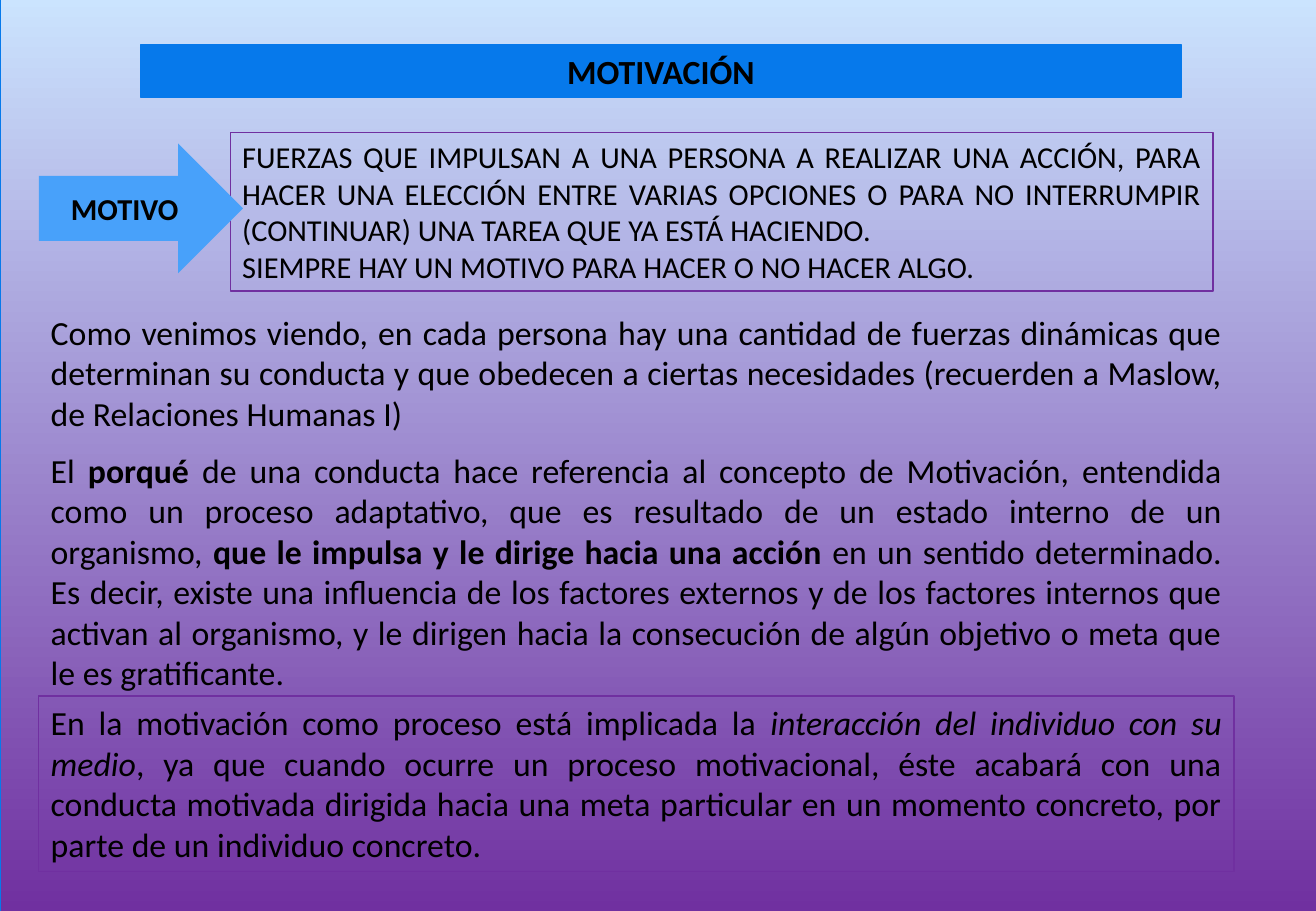
from pptx import Presentation
from pptx.dml.color import RGBColor
from pptx.enum import shapes, text
from pptx.util import Pt

FONT = "Calibri"
BLACK, BLUE, SKY, PURPLE, PALE = "000000", "0679EB", "48A1FA", "7030A0", "CBE4FE"
WIDTH, HEIGHT = 780, 540
LEFT, BODY_WIDTH = 23, 708.5

TITLE = [[("MOTIVACIÓN", "b")]]
MOTIVE = [[("MOTIVO", "b")]]
DEFINITION = [
    [("FUERZAS QUE IMPULSAN A UNA PERSONA A REALIZAR UNA ACCIÓN, PARA HACER UNA "
      "ELECCIÓN ENTRE VARIAS OPCIONES O PARA NO INTERRUMPIR (CONTINUAR) UNA TAREA "
      "QUE YA ESTÁ HACIENDO.", "")],
    [("SIEMPRE HAY UN MOTIVO PARA HACER O NO HACER ALGO.", "")],
]
EXPLANATION = [
    [("Como venimos viendo, en cada persona hay una cantidad de fuerzas dinámicas que "
      "determinan su conducta y que obedecen a ciertas necesidades (recuerden a Maslow, "
      "de Relaciones Humanas I)", "")],
    [("El ", ""), ("porqué", "b"),
     (" de una conducta hace referencia al concepto de Motivación, entendida como un "
      "proceso adaptativo, que es resultado de un estado interno de un organismo, ", ""),
     ("que le impulsa y le dirige hacia una acción", "b"),
     (" en un sentido determinado. Es decir, existe una influencia de los factores "
      "externos y de los factores internos que activan al organismo, y le dirigen hacia "
      "la consecución de algún objetivo o meta que le es gratificante.", "")],
]
CONCLUSION = [
    [("En la motivación como proceso está implicada la ", ""),
     ("interacción del individuo con su medio", "i"),
     (", ya que cuando ocurre un proceso motivacional, éste acabará con una conducta "
      "motivada dirigida hacia una meta particular en un momento concreto, por parte de "
      "un individuo concreto.", "")],
]


def color(value):
    return RGBColor.from_string(value)


def place(sp, box):
    sp.left, sp.top, sp.width, sp.height = [Pt(v) for v in box]


def paint(sp, fill=None, line=None, width=0.75):
    if fill:
        sp.fill.solid()
        sp.fill.fore_color.rgb = color(fill)
    else:
        sp.fill.background()
    if line:
        sp.line.color.rgb = color(line)
        sp.line.width = Pt(width)
    else:
        sp.line.fill.background()


def add_shape(s, kind, box, fill=None, line=None, width=0.75):
    sp = s.shapes.add_shape(kind, *[Pt(v) for v in box])
    sp.shadow.inherit = False
    paint(sp, fill, line, width)
    return sp


def write(sp, paragraphs, size, align, anchor=text.MSO_ANCHOR.TOP, gap=0):
    tf = sp.text_frame
    tf.word_wrap = True
    tf.auto_size = text.MSO_AUTO_SIZE.NONE
    tf.vertical_anchor = anchor
    tf.margin_left = tf.margin_right = Pt(7.2)
    tf.margin_top = tf.margin_bottom = Pt(3.6)
    for i, parts in enumerate(paragraphs):
        p = tf.add_paragraph() if i else tf.paragraphs[0]
        p.alignment = align
        p.space_before = Pt(gap if i else 0)
        for words, style in parts:
            r = p.add_run()
            r.text = words
            r.font.name, r.font.size = FONT, Pt(size)
            r.font.bold, r.font.italic = style == "b", style == "i"
            r.font.color.rgb = color(BLACK)


def main():
    prs = Presentation()
    prs.slide_width, prs.slide_height = Pt(WIDTH), Pt(HEIGHT)
    s = prs.slides.add_slide(prs.slide_layouts[5])
    s.background.fill.solid()
    s.background.fill.fore_color.rgb = color(BLACK)
    rect = shapes.MSO_SHAPE.RECTANGLE
    center, justify = text.PP_ALIGN.CENTER, text.PP_ALIGN.JUSTIFY
    middle = text.MSO_ANCHOR.MIDDLE

    backdrop = add_shape(s, rect, (0, -2, WIDTH, HEIGHT + 2), line=BLUE, width=0.5)
    backdrop.fill.gradient()
    backdrop.fill.gradient_angle = 270
    for stop, value, position in zip(backdrop.fill.gradient_stops, (PALE, PURPLE), (0, 1)):
        stop.color.rgb = color(value)
        stop.position = position

    title = s.shapes.title
    s.shapes._spTree.append(title._element)
    place(title, (83.5, 26.5, 616.5, 31.5))
    paint(title, BLUE, BLUE)
    write(title, TITLE, 20, center, middle)

    definition = add_shape(s, rect, (136.5, 78.5, 582.5, 94), line=PURPLE)
    write(definition, DEFINITION, 18, justify)

    arrow = add_shape(s, shapes.MSO_SHAPE.RIGHT_ARROW, (LEFT, 85, 121, 77), SKY)
    write(arrow, MOTIVE, 18, center, middle)

    explanation = s.shapes.add_textbox(Pt(LEFT), Pt(181), Pt(BODY_WIDTH), Pt(240))
    write(explanation, EXPLANATION, 20, justify, gap=9.75)

    conclusion = add_shape(s, rect, (LEFT, 412.5, BODY_WIDTH, 104), line=PURPLE)
    write(conclusion, CONCLUSION, 20, justify)

    prs.save("out.pptx")


if __name__ == "__main__":
    main()
